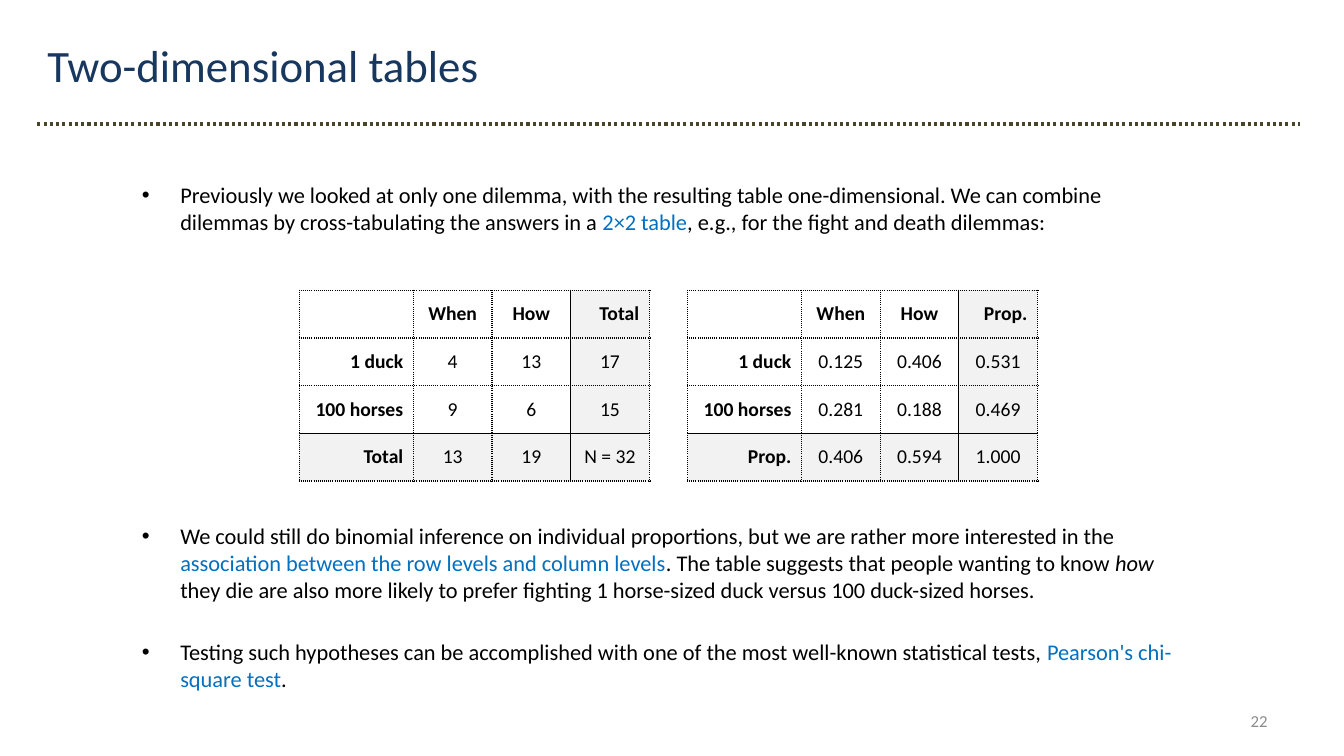
"""Build a slide on cross-tabulated two-dimensional tables."""
from lxml.etree import SubElement
from pptx import Presentation
from pptx.dml.color import RGBColor
from pptx.enum.dml import MSO_LINE
from pptx.enum.shapes import MSO_CONNECTOR
from pptx.enum.text import MSO_ANCHOR, PP_ALIGN
from pptx.oxml import parse_xml
from pptx.oxml.ns import nsdecls, qn
from pptx.util import Inches, Pt

TITLE = "Two-dimensional tables"
PAGE_NUMBER = "22"
BULLETS = [
    (0, [("Previously we looked at only one dilemma, with the resulting table one-dimensional. "
          "We can combine dilemmas by cross-tabulating the answers in a ", "plain"),
         ("2×2 table", "key"),
         (", e.g., for the fight and death dilemmas:", "plain")]),
    (205, [("We could still do binomial inference on individual proportions, "
            "but we are rather more interested in the ", "plain"),
           ("association between the row levels and column levels", "key"),
           (". The table suggests that people wanting to know ", "plain"),
           ("how ", "italic"),
           ("they die are also more likely to prefer fighting 1 horse-sized duck "
            "versus 100 duck-sized horses.", "plain")]),
    (25.5, [("Testing such hypotheses can be accomplished with one of the most well-known "
             "statistical tests, ", "plain"),
            ("Pearson's chi-square test", "key"),
            (".", "plain")]),
]
TABLES = [
    [("", "When", "How", "Total"),
     ("1 duck", "4", "13", "17"),
     ("100 horses", "9", "6", "15"),
     ("Total", "13", "19", "N = 32")],
    [("", "When", "How", "Prop."),
     ("1 duck", "0.125", "0.406", "0.531"),
     ("100 horses", "0.281", "0.188", "0.469"),
     ("Prop.", "0.406", "0.594", "1.000")],
]
COLORS = {"title": "17375E", "rule": "4A452A", "text": "000000",
          "key": "0070C0", "total": "F2F2F2", "page": "8C8C8C"}
FONT = "Calibri"
COLUMN_WIDTHS = (1.13, 0.78, 0.78, 0.78)
ROW_HEIGHT = 0.473
TABLE_LEFT, TABLE_TOP, TABLE_PITCH = 2.97, 2.88, 3.85
MARGIN = 0.37


def color(name):
    """Return the named colour."""
    return RGBColor.from_string(COLORS[name])


def style(font, size, name, bold=False):
    """Set the face, size, colour and weight of a font."""
    font.name, font.size, font.bold = FONT, Pt(size), bold
    font.color.rgb = color(name)


def add_border(cell, position, side, solid):
    """Draw one side of a cell, solid or dotted."""
    dash = "solid" if solid else "sysDot"
    border = parse_xml(
        f'<a:{side} {nsdecls("a")} w="12700"><a:solidFill><a:srgbClr val="{COLORS["text"]}"/>'
        f'</a:solidFill><a:prstDash val="{dash}"/></a:{side}>')
    cell._tc.get_or_add_tcPr().insert(position, border)


def add_cross_table(slide, left, rows):
    """Add a table whose last row and column hold shaded totals."""
    last = len(rows) - 1
    table = slide.shapes.add_table(
        len(rows), len(COLUMN_WIDTHS), Inches(left), Inches(TABLE_TOP),
        Inches(sum(COLUMN_WIDTHS)), Inches(ROW_HEIGHT * len(rows))).table
    table.first_row = table.horz_banding = False
    for column, width in zip(table.columns, COLUMN_WIDTHS):
        column.width = Inches(width)
    for r, values in enumerate(rows):
        table.rows[r].height = Inches(ROW_HEIGHT)
        for c, value in enumerate(values):
            cell = table.cell(r, c)
            cell.text = value
            cell.vertical_anchor = MSO_ANCHOR.MIDDLE
            paragraph = cell.text_frame.paragraphs[0]
            style(paragraph.font, 14, "text", bold=r == 0 or c == 0)
            right = c == 0 or (r, c) == (0, last)
            paragraph.alignment = PP_ALIGN.RIGHT if right else PP_ALIGN.CENTER
            if last in (r, c):
                cell.fill.solid()
                cell.fill.fore_color.rgb = color("total")
            else:
                cell.fill.background()
            sides = (("lnL", c == last), ("lnR", c + 1 == last),
                     ("lnT", r == last), ("lnB", r + 1 == last))
            for position, (side, solid) in enumerate(sides):
                add_border(cell, position, side, solid)


def add_bullets(slide):
    """Add the bulleted text, leaving room for the tables."""
    frame = slide.shapes.add_textbox(
        Inches(1.31), Inches(1.75), Inches(10.63), Inches(5.39)).text_frame
    frame.word_wrap = True
    for index, (space, runs) in enumerate(BULLETS):
        paragraph = frame.paragraphs[0] if index == 0 else frame.add_paragraph()
        paragraph.space_before = Pt(space)
        properties = paragraph._p.get_or_add_pPr()
        properties.set("marL", str(Inches(0.38)))
        properties.set("indent", str(Inches(-0.38)))
        SubElement(properties, qn("a:buFont"), typeface="Arial")
        SubElement(properties, qn("a:buChar"), char="•")
        for text, kind in runs:
            run = paragraph.add_run()
            run.text = text
            style(run.font, 16, "key" if kind == "key" else "text")
            run.font.italic = kind == "italic"


def main():
    """Assemble and save the slide."""
    presentation = Presentation()
    presentation.slide_width, presentation.slide_height = Inches(13.33), Inches(7.5)
    slide = presentation.slides.add_slide(presentation.slide_layouts[5])

    title = slide.shapes.title
    title.left, title.top = Inches(MARGIN), Inches(0.32)
    title.width, title.height = Inches(11.65), Inches(0.64)
    title.text_frame.text = TITLE
    title.text_frame.vertical_anchor = MSO_ANCHOR.TOP
    heading = title.text_frame.paragraphs[0]
    heading.alignment = PP_ALIGN.LEFT
    style(heading.font, 32, "title")

    rule = slide.shapes.add_connector(
        MSO_CONNECTOR.STRAIGHT, Inches(MARGIN), Inches(1.23), Inches(12.89), Inches(1.23))
    rule.line.color.rgb = color("rule")
    rule.line.width = Pt(2.25)
    rule.line.dash_style = MSO_LINE.ROUND_DOT
    SubElement(rule._element.spPr, qn("a:effectLst"))

    add_bullets(slide)
    for index, rows in enumerate(TABLES):
        add_cross_table(slide, TABLE_LEFT + index * TABLE_PITCH, rows)

    page = slide.shapes.add_textbox(
        Inches(9.56), Inches(6.95), Inches(3.11), Inches(0.4)).text_frame
    page.text = PAGE_NUMBER
    page.word_wrap = True
    page.vertical_anchor = MSO_ANCHOR.MIDDLE
    page.paragraphs[0].alignment = PP_ALIGN.RIGHT
    style(page.paragraphs[0].font, 12, "page")

    presentation.save("out.pptx")


if __name__ == "__main__":
    main()
